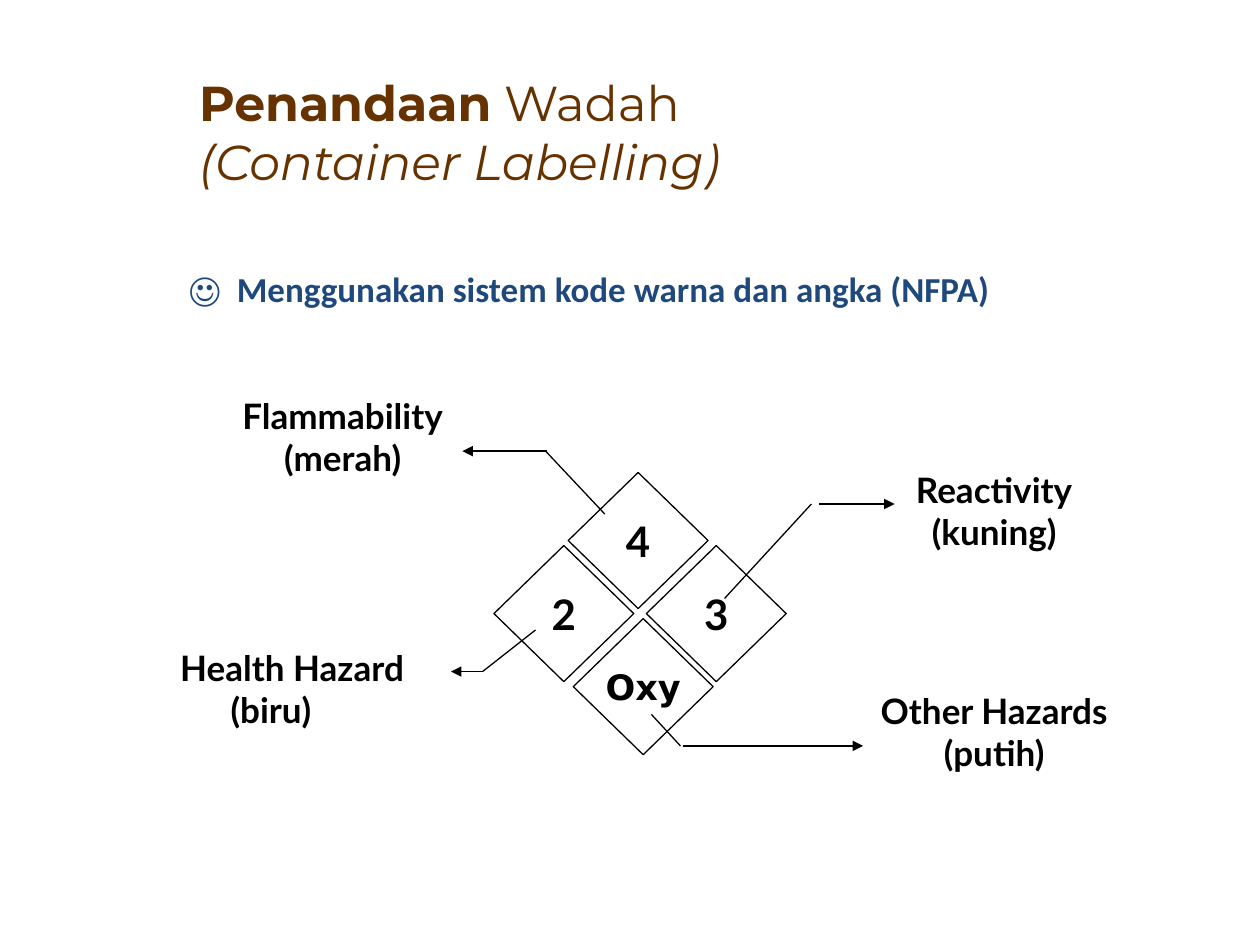
from dataclasses import dataclass

from lxml import etree
from pptx import Presentation
from pptx import util as u
from pptx.dml.color import RGBColor
from pptx.enum import shapes, text
from pptx.oxml import ns

PX = u.Inches(1) // 100


@dataclass(frozen=True)
class Theme:
    title_font: str = "Montserrat"
    body_font: str = "Calibri"
    label_font: str = "Lato"
    code_font: str = "DejaVu Sans"
    brown: str = "663300"
    blue: str = "1F497D"
    black: str = "000000"
    title_size: int = 28
    rating_size: int = 24
    body_size: int = 20
    line_width: float = 0.75


THEME = Theme()


def px(*lengths):
    return [u.Emu(length * PX) for length in lengths]


def add_run(paragraph, content, font, size, color, bold=True, italic=False):
    run = paragraph.add_run()
    run.text = content
    run.font.name = font
    run.font.size = u.Pt(size)
    run.font.bold = bold
    run.font.italic = italic
    run.font.color.rgb = RGBColor.from_string(color)


def set_insets(frame, side, end):
    frame.margin_left, frame.margin_right = px(side, side)
    frame.margin_top, frame.margin_bottom = px(end, end)


def set_indent(paragraph, left, first):
    properties = paragraph._p.get_or_add_pPr()
    properties.set("marL", str(left * PX))
    properties.set("indent", str(first * PX))


def add_title(slide, box):
    title = slide.shapes.title
    title.left, title.top, title.width, title.height = px(*box)
    frame = title.text_frame
    frame.auto_size = text.MSO_AUTO_SIZE.NONE
    frame.vertical_anchor = text.MSO_ANCHOR.MIDDLE
    set_insets(frame, 8, 4)
    paragraph = frame.paragraphs[0]
    paragraph.alignment = text.PP_ALIGN.LEFT
    style = (THEME.title_font, THEME.title_size, THEME.brown)
    add_run(paragraph, "Penandaan", *style)
    add_run(paragraph, " Wadah", *style, bold=False)
    paragraph.add_line_break()
    add_run(paragraph, "(Container Labelling)", *style, bold=False, italic=True)


def add_statement(slide, box):
    frame = slide.shapes.add_textbox(*px(*box)).text_frame
    frame.word_wrap = True
    set_insets(frame, 8, 4)
    paragraph = frame.paragraphs[0]
    paragraph.alignment = text.PP_ALIGN.JUSTIFY
    paragraph.space_before = u.Pt(4)
    set_indent(paragraph, 38, -38)
    add_run(paragraph, "☺\tMenggunakan sistem kode warna dan angka (NFPA)",
            THEME.body_font, THEME.body_size, THEME.blue)


def add_diamond(slide, box, rating, font, size):
    shape = slide.shapes.add_shape(shapes.MSO_SHAPE.DIAMOND, *px(*box))
    shape.shadow.inherit = False
    shape.fill.background()
    shape.line.color.rgb = RGBColor.from_string(THEME.black)
    shape.line.width = u.Pt(THEME.line_width)
    frame = shape.text_frame
    frame.word_wrap = False
    frame.vertical_anchor = text.MSO_ANCHOR.MIDDLE
    paragraph = frame.paragraphs[0]
    paragraph.alignment = text.PP_ALIGN.CENTER
    add_run(paragraph, rating, font, size, THEME.black)


def add_label(slide, box, lines, alignment=text.PP_ALIGN.CENTER, indent=0):
    frame = slide.shapes.add_textbox(*px(*box)).text_frame
    frame.word_wrap = False
    set_insets(frame, 0, 5)
    for index, line in enumerate(lines):
        paragraph = frame.paragraphs[0] if index == 0 else frame.add_paragraph()
        paragraph.alignment = alignment
        set_indent(paragraph, indent * index, 0)
        add_run(paragraph, line, THEME.label_font, THEME.body_size, THEME.black)


def add_line(slide, start, end, arrow=False):
    connector = slide.shapes.add_connector(
        shapes.MSO_CONNECTOR.STRAIGHT, *px(*start, *end))
    connector.line.color.rgb = RGBColor.from_string(THEME.black)
    connector.line.width = u.Pt(THEME.line_width)
    if arrow:
        outline = connector.line._get_or_add_ln()
        etree.SubElement(outline, ns.qn("a:tailEnd")).set("type", "triangle")
    etree.SubElement(connector._element.spPr, ns.qn("a:effectLst"))


def add_hazard_diagram(slide, box):
    left, top, width, height = box

    def place(x, y):
        return left + x, top + y

    number_style = (THEME.label_font, THEME.rating_size)
    diamonds = [
        (259, 125, "2", *number_style),
        (318, 67, "4", *number_style),
        (380, 125, "3", *number_style),
        (322, 183, "Oxy", THEME.code_font, THEME.body_size),
    ]
    for x, y, rating, font, size in diamonds:
        add_diamond(slide, (*place(x, y), 111, 108), rating, font, size)

    leaders = [
        ((347, 100), (300, 50), (301, 50), (234, 50)),
        ((442, 167), (511, 92), (517, 92), (577, 92)),
        ((292, 192), (250, 225), (250, 225), (225, 225)),
        ((384, 259), (407, 284), (409, 284), (552, 284)),
    ]
    for start, bend, arrow_start, tip in leaders:
        add_line(slide, place(*start), place(*bend))
        add_line(slide, place(*arrow_start), place(*tip), arrow=True)

    right_center = width - 92
    labels = [
        (139, 0, 184, 67, ("Flammability", "(merah)")),
        (right_center, 59, 160, 92, ("Reactivity", "(kuning)")),
        (right_center, 234, 184, height - 234, ("Other Hazards", "(putih)")),
    ]
    for center, y, label_width, label_height, lines in labels:
        position = place(center - label_width // 2, y)
        add_label(slide, (*position, label_width, label_height), lines)
    add_label(slide, (*place(10, 200), 195, 67), ("Health Hazard", "(biru)"),
              text.PP_ALIGN.LEFT, indent=40)


def main():
    presentation = Presentation()
    presentation.slide_width, presentation.slide_height = px(1000, 750)
    slide = presentation.slides.add_slide(presentation.slide_layouts[5])
    add_title(slide, (150, 50, 550, 108))
    add_statement(slide, (142, 208, 823, 75))
    add_hazard_diagram(slide, (133, 308, 748, 359))
    presentation.save("out.pptx")


if __name__ == "__main__":
    main()
